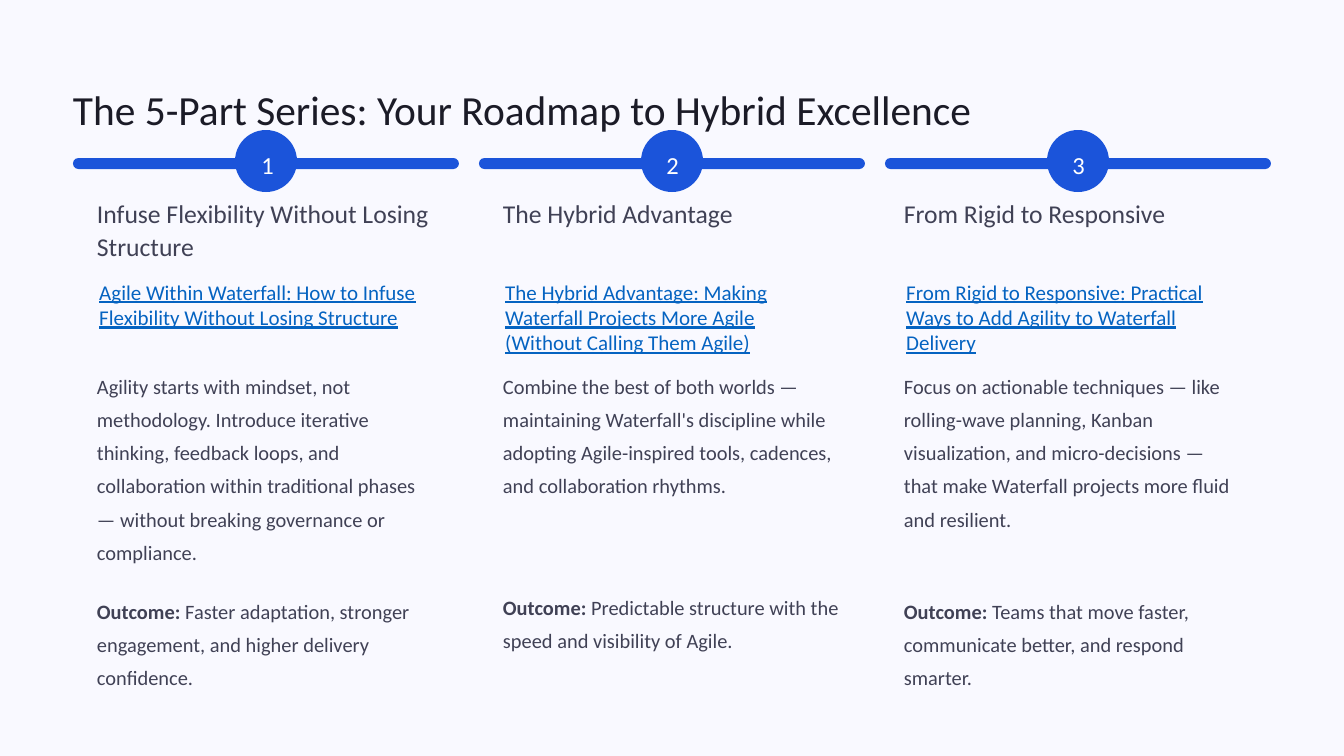
"""Builds the slide with the first three parts of the hybrid delivery series."""
import pptx
import pptx.dml.color
import pptx.enum.shapes
import pptx.enum.text
import pptx.util

SCALE = 914400 / 84
COLORS = {"background": "F9F9FF", "title": "1B1B27", "accent": "1B54DA",
          "text": "404155", "link": "0563C1", "number": "FFFFFF"}
FONT = "Calibri"
LEFT, PITCH, WIDTH = 73, 406, 386
TEXT_WIDTH = 338
CIRCLE = 62

PARTS = [
    {"heading": "Infuse Flexibility Without Losing Structure",
     "link": "Agile Within Waterfall: How to Infuse Flexibility Without Losing Structure",
     "body": "Agility starts with mindset, not methodology. Introduce iterative thinking, "
             "feedback loops, and collaboration within traditional phases — without breaking "
             "governance or compliance.",
     "outcome": " Faster adaptation, stronger engagement, and higher delivery confidence.",
     "text_left": 97, "number_left": 255, "outcome_top": 590,
     "heading_height": 66, "link_height": 60, "body_height": 200},
    {"heading": "The Hybrid Advantage",
     "link": "The Hybrid Advantage: Making Waterfall Projects More Agile "
             "(Without Calling Them Agile)",
     "body": "Combine the best of both worlds — maintaining Waterfall's discipline while "
             "adopting Agile-inspired tools, cadences, and collaboration rhythms.",
     "outcome": " Predictable structure with the speed and visibility of Agile.",
     "text_left": 503, "number_left": 660, "outcome_top": 586,
     "heading_height": 33, "link_height": 85, "body_height": 166},
    {"heading": "From Rigid to Responsive",
     "link": "From Rigid to Responsive: Practical Ways to Add Agility to Waterfall Delivery",
     "body": "Focus on actionable techniques — like rolling-wave planning, Kanban "
             "visualization, and micro-decisions — that make Waterfall projects more fluid "
             "and resilient.",
     "outcome": " Teams that move faster, communicate better, and respond smarter.",
     "text_left": 904, "number_left": 1066, "outcome_top": 590,
     "heading_height": 33, "link_height": 110, "body_height": 166},
]


def px(n):
    return pptx.util.Emu(round(n * SCALE))


def rgb(name):
    return pptx.dml.color.RGBColor.from_string(COLORS[name])


def format_paragraph(p, size, color, line=None):
    p.font.size = pptx.util.Pt(size)
    p.font.name = FONT
    p.font.color.rgb = rgb(color)
    if line:
        p.line_spacing = pptx.util.Pt(line)


def clear_margins(tf):
    tf.margin_left = tf.margin_top = tf.margin_right = tf.margin_bottom = 0


def add_title(slide, text):
    sp = slide.shapes.title
    sp.left, sp.top, sp.width, sp.height = px(73), px(82), px(1114), px(52)
    tf = sp.text_frame
    clear_margins(tf)
    tf.auto_size = pptx.enum.text.MSO_AUTO_SIZE.NONE
    tf.vertical_anchor = pptx.enum.text.MSO_ANCHOR.TOP
    p = tf.paragraphs[0]
    p.text = text
    p.alignment = pptx.enum.text.PP_ALIGN.LEFT
    format_paragraph(p, 35.5, "title", 44.5)


def add_text(slide, box, runs, size, color, line=None, margins=False):
    sp = slide.shapes.add_textbox(*map(px, box))
    tf = sp.text_frame
    tf.word_wrap = True
    if not margins:
        clear_margins(tf)
    p = tf.paragraphs[0]
    for text in runs:
        p.add_run().text = text
    format_paragraph(p, size, color, line)
    return p


def add_rounded(slide, box):
    sp = slide.shapes.add_shape(
        pptx.enum.shapes.MSO_SHAPE.ROUNDED_RECTANGLE, *map(px, box))
    sp.adjustments[0] = 0.5
    sp.fill.solid()
    sp.fill.fore_color.rgb = rgb("accent")
    sp.line.fill.background()
    sp.shadow.inherit = False


def add_part(slide, i, part):
    left = LEFT + i * PITCH
    x = part["text_left"]
    add_rounded(slide, (left, 158, WIDTH, 11))
    add_rounded(slide, (left + (WIDTH - CIRCLE) / 2, 130, CIRCLE, CIRCLE))
    p = add_text(slide, (part["number_left"], 140, 25, 31), [str(i + 1)], 21, "number", 34)
    p.alignment = pptx.enum.text.PP_ALIGN.CENTER
    add_text(slide, (x, 197, TEXT_WIDTH, part["heading_height"]),
             [part["heading"]], 22, "text", 27.5)
    p = add_text(slide, (x - 6, 275, TEXT_WIDTH, part["link_height"]),
                 [part["link"]], 18, "link", margins=True)
    p.font.underline = True
    add_text(slide, (x, 365, TEXT_WIDTH, part["body_height"]),
             [part["body"]], 17.5, "text", 28.5)
    p = add_text(slide, (x, part["outcome_top"], TEXT_WIDTH, 100),
                 ["Outcome:", part["outcome"]], 17.5, "text", 28.5)
    p.runs[0].font.bold = True


def main():
    prs = pptx.Presentation()
    prs.slide_width, prs.slide_height = px(1344), px(756)
    slide = prs.slides.add_slide(prs.slide_layouts[5])
    slide.background.fill.solid()
    slide.background.fill.fore_color.rgb = rgb("background")
    add_title(slide, "The 5-Part Series: Your Roadmap to Hybrid Excellence")
    for i, part in enumerate(PARTS):
        add_part(slide, i, part)
    prs.save("out.pptx")


if __name__ == "__main__":
    main()
